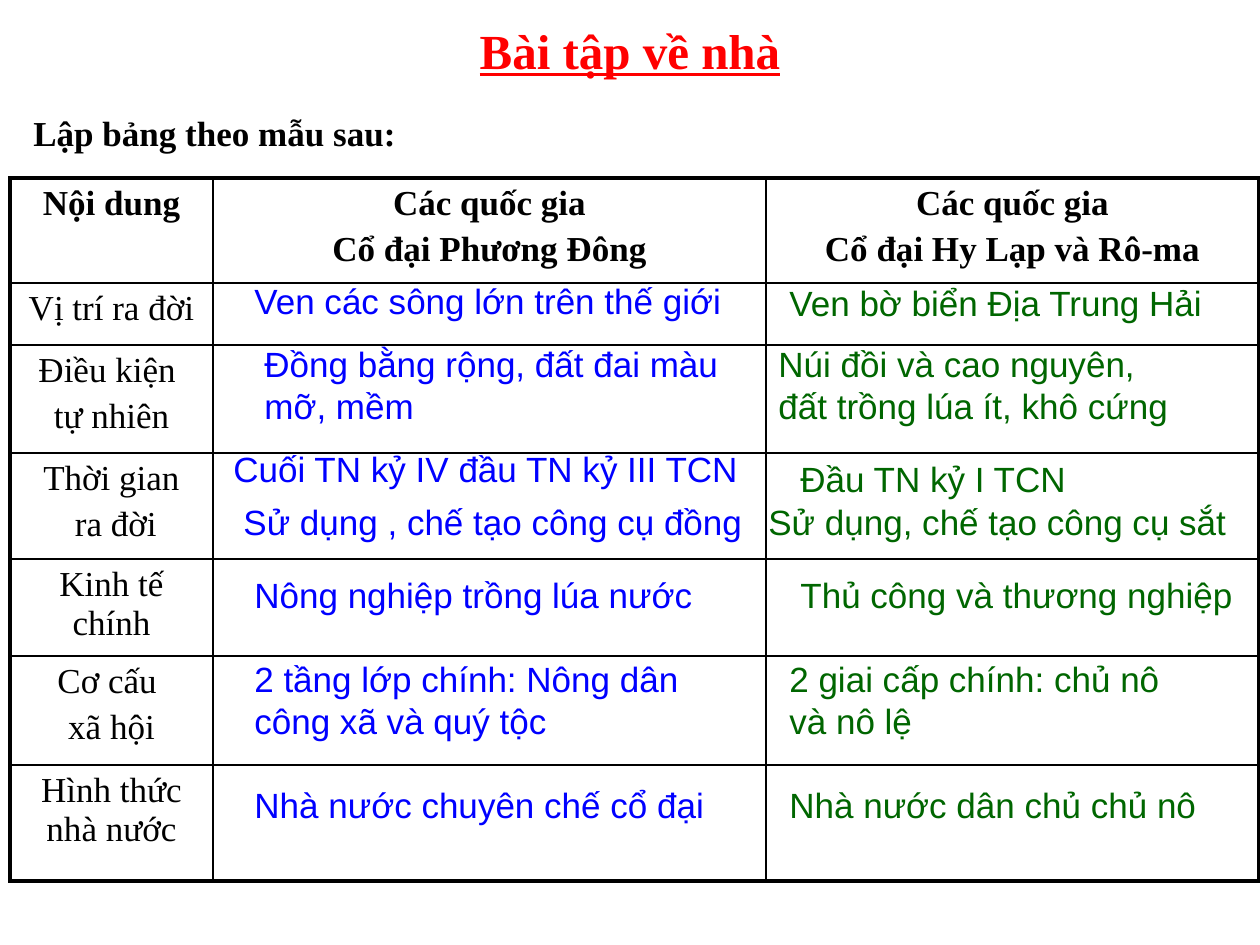
from lxml import etree
from pptx import Presentation
from pptx.dml.color import RGBColor
from pptx.enum.text import MSO_ANCHOR, PP_ALIGN
from pptx.oxml.ns import qn
from pptx.util import Emu, Pt

CENTER, LEFT = PP_ALIGN.CENTER, PP_ALIGN.LEFT
TOP, MIDDLE = MSO_ANCHOR.TOP, MSO_ANCHOR.MIDDLE
SERIF, SANS = "Times New Roman", "Arial"
BLACK, RED, BLUE, GREEN = "000000", "FF0000", "0000FF", "006600"
THICK, THIN = Pt(2.25), Pt(1)
LINE_1, LINE_2 = 54, 97  # heights of one-line and two-line boxes


def px(n):
    return Emu(round(n * 914400 / 126))


def rgb(value):
    return RGBColor.from_string(value)


class Deck:
    def __init__(self):
        self.prs = Presentation()
        self.prs.slide_width, self.prs.slide_height = px(1260), px(945)
        self.slide = self.prs.slides.add_slide(self.prs.slide_layouts[6])

    def add_lines(self, tf, lines, font, color, size=20, bold=False,
                  underline=False, align=LEFT):
        for i, line in enumerate(lines):
            p = tf.paragraphs[0] if i == 0 else tf.add_paragraph()
            p.alignment = align
            p.space_before = Pt(4 if i else 0)
            r = p.add_run()
            r.text = line
            r.font.name, r.font.size = font, Pt(size)
            r.font.bold, r.font.underline = bold, underline
            r.font.color.rgb = rgb(color)

    def text(self, x, y, w, h, line, font, color, anchor=TOP, **style):
        sp = self.slide.shapes.add_textbox(px(x), px(y), px(w), px(h))
        tf = sp.text_frame
        tf.word_wrap = True
        tf.vertical_anchor = anchor
        self.add_lines(tf, [line], font, color, **style)

    def border(self, cell, widths):
        tc_pr = cell._tc.get_or_add_tcPr()
        for i, (side, width) in enumerate(widths.items()):
            ln = etree.Element(qn("a:" + side), w=str(width))
            fill = etree.SubElement(ln, qn("a:solidFill"))
            etree.SubElement(fill, qn("a:srgbClr"), val=BLACK)
            tc_pr.insert(i, ln)

    def table(self, x, y, cols, rows, header, labels):
        frame = self.slide.shapes.add_table(
            len(rows), len(cols), px(x), px(y), px(sum(cols)), px(sum(rows)))
        table = frame.table
        table.first_row = table.horz_banding = False
        for col, width in zip(table.columns, cols):
            col.width = px(width)
        last_r, last_c = len(rows) - 1, len(cols) - 1
        for r, height in enumerate(rows):
            table.rows[r].height = px(height)
            for c in range(len(cols)):
                cell = table.cell(r, c)
                cell.fill.background()
                self.border(cell, {
                    "lnL": THICK if c == 0 else THIN,
                    "lnR": THICK if c == last_c else THIN,
                    "lnT": THICK if r == 0 else THIN,
                    "lnB": THICK if r == last_r else THIN})
                if r == 0:
                    lines = header[c]
                else:
                    lines = labels[r - 1] if c == 0 else []
                self.add_lines(cell.text_frame, lines, SERIF, BLACK,
                               bold=r == 0, align=CENTER)


HEADER = [["Nội dung"],
          ["Các quốc gia", "Cổ đại Phương Đông"],
          ["Các quốc gia", "Cổ đại Hy Lạp và Rô-ma"]]
LABELS = [["Vị trí ra đời"],
          ["Điều kiện ", "tự nhiên"],
          ["Thời gian", " ra đời"],
          ["Kinh tế chính"],
          ["Cơ cấu ", "xã hội"],
          ["Hình thức nhà nước"]]

# Answers: left, top, width, height, text
EAST = [(242, 273, 536, LINE_1, "Ven các sông lớn trên thế giới"),
        (252, 336, 514, LINE_2, "Đồng bằng rộng, đất đai màu mỡ, mềm"),
        (221, 441, 557, LINE_1, "Cuối TN kỷ IV đầu TN kỷ III TCN"),
        (231, 494, 525, LINE_1, "Sử dụng , chế tạo công cụ đồng"),
        (242, 567, 494, LINE_1, "Nông nghiệp trồng lúa nước"),
        (242, 651, 451, LINE_2, "2 tầng lớp chính: Nông dân công xã và quý tộc"),
        (242, 777, 483, LINE_1, "Nhà nước chuyên chế cổ đại")]
WEST = [(777, 275, 462, LINE_1, "Ven bờ biển Địa Trung Hải"),
        (766, 336, 420, LINE_2, "Núi đồi và cao nguyên, đất trồng lúa ít, khô cứng"),
        (788, 451, 315, LINE_1, "Đầu TN kỷ I TCN"),
        (756, 494, 504, LINE_1, "Sử dụng, chế tạo công cụ sắt"),
        (788, 567, 472, LINE_1, "Thủ công và thương nghiệp"),
        (777, 651, 431, LINE_2, "2 giai cấp chính: chủ nô và nô lệ"),
        (777, 777, 441, LINE_1, "Nhà nước dân chủ chủ nô")]


def main():
    deck = Deck()

    # Title and instruction
    deck.text(63, 21, 1134, 57, "Bài tập về nhà", SERIF, RED, anchor=MIDDLE,
              size=28, bold=True, underline=True, align=CENTER)
    deck.text(21, 105, 577, LINE_1, "Lập bảng theo mẫu sau:", SERIF, BLACK,
              bold=True)

    # Comparison table
    deck.table(10, 178, [203, 553, 493], [105, 62, 108, 106, 97, 109, 116],
               HEADER, LABELS)

    # Answers laid over the empty cells
    for answers, color in ((EAST, BLUE), (WEST, GREEN)):
        for x, y, w, h, line in answers:
            deck.text(x, y, w, h, line, SANS, color)

    deck.prs.save("out.pptx")


if __name__ == "__main__":
    main()
